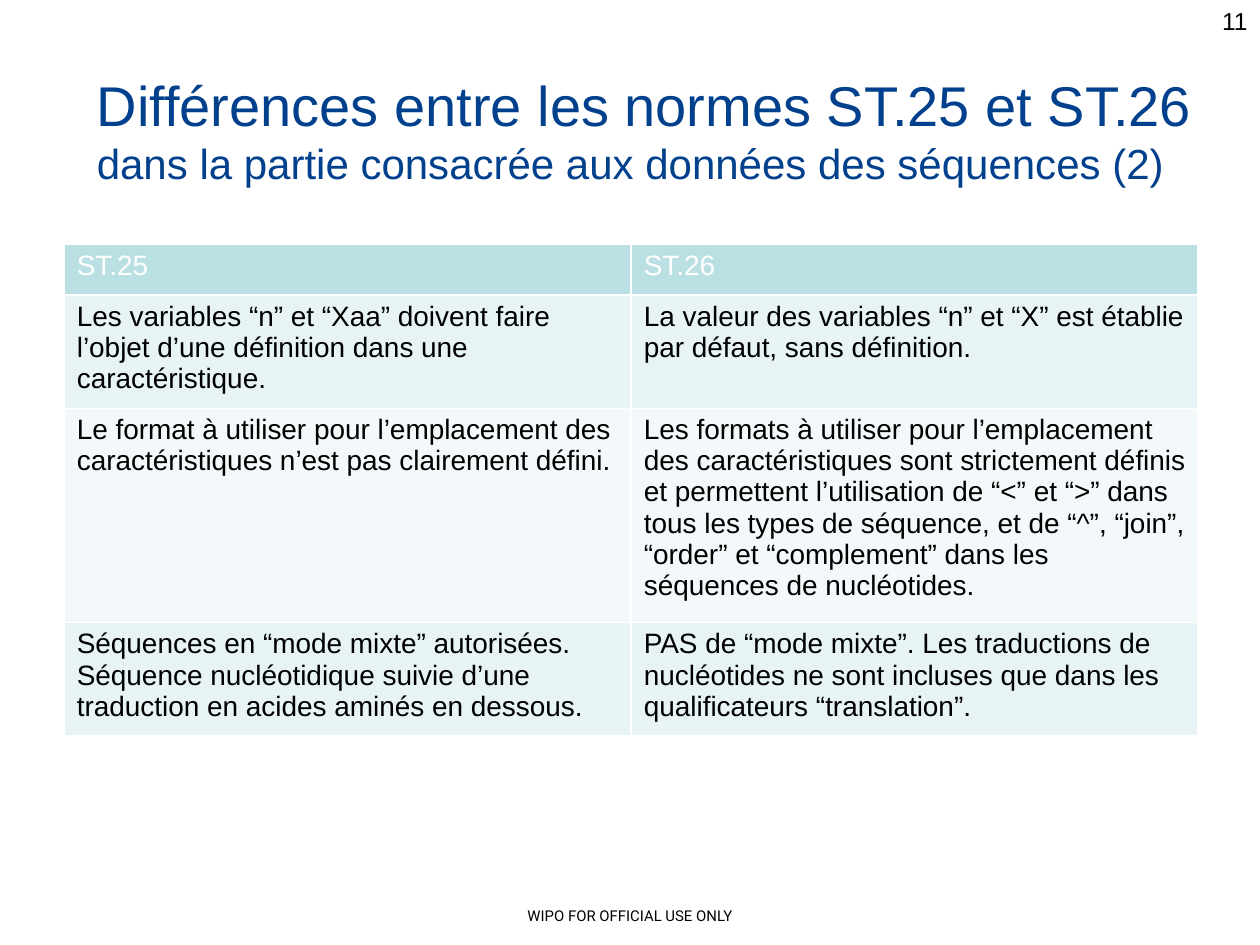
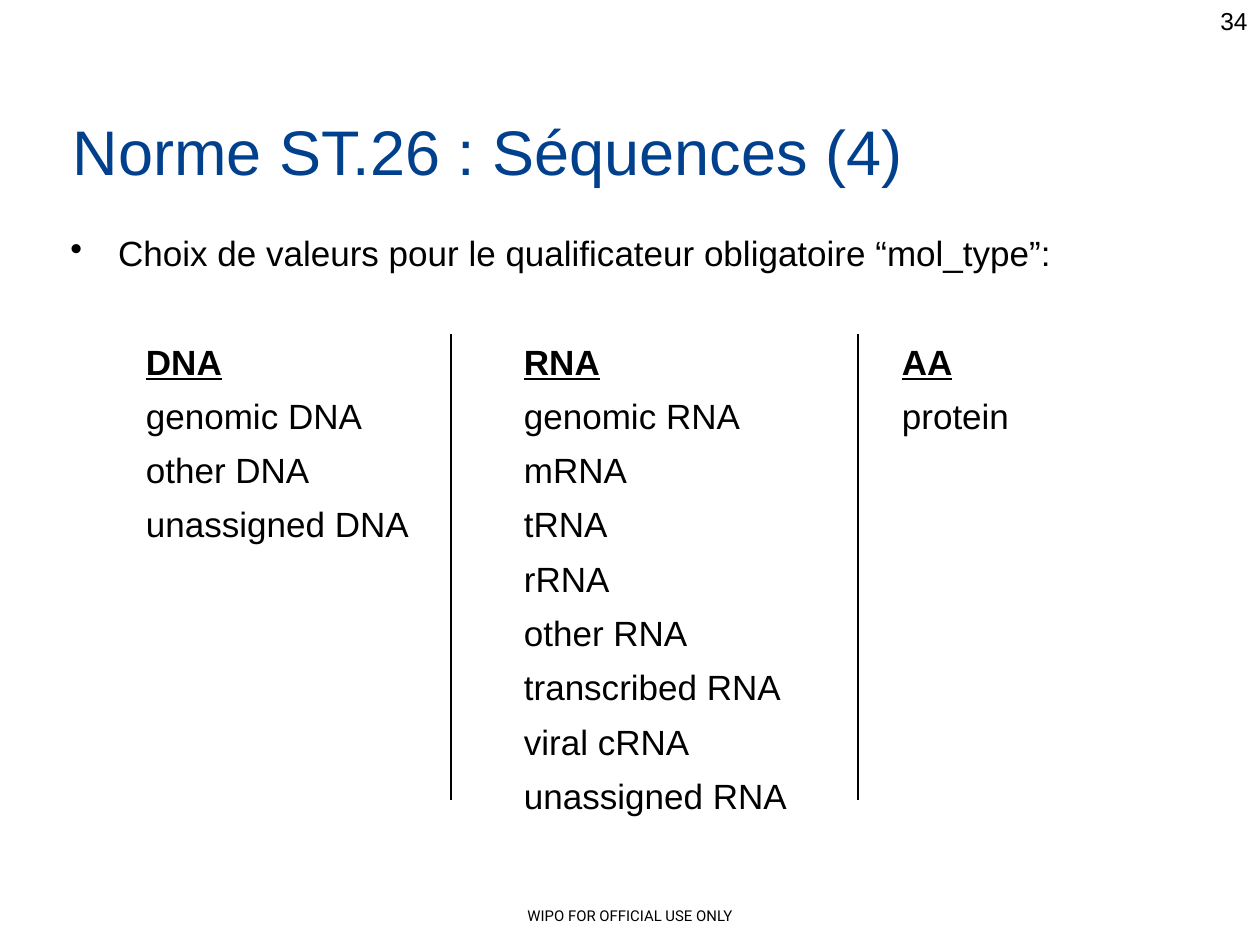
from dataclasses import dataclass

from lxml import etree
from pptx import Presentation
from pptx.dml.color import RGBColor
from pptx.enum import shapes, text
from pptx.oxml import ns
from pptx.util import Inches, Pt

FOOTER = "WIPO FOR OFFICIAL USE ONLY"

COMPARISON = {
    "number": "11",
    "title": [("Différences entre les normes ST.25 et ST.26", 32),
              ("dans la partie consacrée aux données des séquences (2)", 24)],
    "title_at": (0.67, 0.47),
    "rows": [
        ("ST.25", "ST.26"),
        ("Les variables “n” et “Xaa” doivent faire l’objet d’une définition dans une caractéristique.",
         "La valeur des variables “n” et “X” est établie par défaut, sans définition."),
        ("Le format à utiliser pour l’emplacement des caractéristiques n’est pas clairement défini.",
         "Les formats à utiliser pour l’emplacement des caractéristiques sont strictement définis "
         "et permettent l’utilisation de “<” et “>” dans tous les types de séquence, et de “^”, "
         "“join”, “order” et “complement” dans les séquences de nucléotides."),
        ("Séquences en “mode mixte” autorisées. Séquence nucléotidique suivie d’une traduction "
         "en acides aminés en dessous.",
         "PAS de “mode mixte”. Les traductions de nucléotides ne sont incluses que dans les "
         "qualificateurs “translation”."),
    ],
    "row_heights": (0.4, 0.9, 1.7, 0.9),
}

MOL_TYPES = {
    "number": "34",
    "title": [("Norme ST.26 : Séquences (4)", 36)],
    "title_at": (0.48, 0.8),
    "bullet": "Choix de valeurs pour le qualificateur obligatoire “mol_type”:",
    "headings": ("DNA", "RNA", "AA"),
    "values": [
        ("genomic DNA", "genomic RNA", "protein"),
        ("other DNA", "mRNA"),
        ("unassigned DNA", "tRNA"),
        ("", "rRNA"),
        ("", "other RNA"),
        ("", "transcribed RNA"),
        ("", "viral cRNA"),
        ("", "unassigned RNA"),
    ],
    "column_step": 3,
    "dividers": (3.58, 6.81),
}


@dataclass(frozen=True)
class Theme:
    font: str = "Arial"
    footer_font: str = "Roboto"
    title: str = "00408C"
    ink: str = "000000"
    white: str = "FFFFFF"
    header: str = "BBE0E3"
    bands: tuple = ("E7F3F4", "F3F9FA")
    footer_size: float = 8.5
    number_size: float = 14
    table_size: float = 16
    body_size: float = 20


THEME = Theme()


def style(p, size, color=THEME.ink, font=THEME.font):
    p.font.size, p.font.name = Pt(size), font
    p.font.color.rgb = RGBColor.from_string(color)


def add_box(s, x, y, w, h):
    tf = s.shapes.add_textbox(*map(Inches, (x, y, w, h))).text_frame
    tf.word_wrap = True
    return tf


def add_line(s, x, y, w, h, content, size, align, font=THEME.font):
    p = add_box(s, x, y, w, h).paragraphs[0]
    p.text, p.alignment = content, align
    style(p, size, font=font)
    return p


def new_slide(prs, content):
    """Blank slide with the shared footer, page number and title."""
    s = prs.slides.add_slide(prs.slide_layouts[6])
    add_line(s, 0, 7.15, 10, 0.24, FOOTER, THEME.footer_size,
             text.PP_ALIGN.CENTER, THEME.footer_font)
    add_line(s, 7.67, 0, 2.33, 0.52, content["number"], THEME.number_size, text.PP_ALIGN.RIGHT)
    tf = add_box(s, *content["title_at"], 9, 1.25)
    tf.margin_top = Inches(0.09)
    for i, (line, size) in enumerate(content["title"]):
        p = tf.add_paragraph() if i else tf.paragraphs[0]
        p.text = line
        style(p, size, THEME.title)
    return s


def set_borders(cell, color, width):
    tc_pr = cell._tc.get_or_add_tcPr()
    for side in ("lnL", "lnR", "lnT", "lnB"):
        ln = etree.SubElement(tc_pr, ns.qn(f"a:{side}"), w=str(Pt(width)))
        fill = etree.SubElement(ln, ns.qn("a:solidFill"))
        etree.SubElement(fill, ns.qn("a:srgbClr"), val=color)


def add_comparison_table(s, rows, heights):
    table = s.shapes.add_table(len(rows), 2, Inches(0.51), Inches(1.94),
                               Inches(9), Inches(sum(heights))).table
    table.first_row = table.horz_banding = False
    for i, (row, height) in enumerate(zip(rows, heights)):
        table.rows[i].height = Inches(height)
        fill = THEME.bands[(i - 1) % 2] if i else THEME.header
        for j, content in enumerate(row):
            cell = table.cell(i, j)
            set_borders(cell, THEME.white, 1)
            cell.fill.solid()
            cell.fill.fore_color.rgb = RGBColor.from_string(fill)
            cell.text = content
            style(cell.text_frame.paragraphs[0], THEME.table_size,
                  THEME.ink if i else THEME.white)


def add_bullet(s, content):
    p = add_box(s, 0.46, 1.79, 9.34, 0.44).paragraphs[0]
    p.text = content
    p_pr = p._p.get_or_add_pPr()
    p_pr.set("marL", str(Inches(0.38)))
    p_pr.set("indent", str(-Inches(0.38)))
    etree.SubElement(p_pr, ns.qn("a:buChar"), char="•")
    style(p, THEME.body_size)


def add_tabbed_columns(s, headings, values, step):
    tf = add_box(s, 1.06, 2.65, 7.24, 4.41)
    for i, row in enumerate([headings, *values]):
        p = tf.add_paragraph() if i else tf.paragraphs[0]
        if i:
            p.space_before = Pt(7)
        tabs = etree.SubElement(p._p.get_or_add_pPr(), ns.qn("a:tabLst"))
        for k in range(1, len(headings)):
            etree.SubElement(tabs, ns.qn("a:tab"), pos=str(Inches(k * step)), algn="l")
        style(p, THEME.body_size)
        if i:
            p.add_run().text = "\t".join(row)
            continue
        for k, heading in enumerate(row):
            if k:
                p.add_run().text = "\t"
            r = p.add_run()
            r.text = heading
            r.font.bold = r.font.underline = True


def add_divider(s, x):
    line = s.shapes.add_connector(shapes.MSO_CONNECTOR.STRAIGHT, Inches(x), Inches(2.65),
                                  Inches(x), Inches(6.35))
    line.line.color.rgb = RGBColor.from_string(THEME.ink)
    line.line.width = Pt(0.75)
    etree.SubElement(line._element.spPr, ns.qn("a:effectLst"))


def main():
    prs = Presentation()
    prs.slide_width, prs.slide_height = Inches(10), Inches(7.5)

    s = new_slide(prs, COMPARISON)
    add_comparison_table(s, COMPARISON["rows"], COMPARISON["row_heights"])

    s = new_slide(prs, MOL_TYPES)
    add_bullet(s, MOL_TYPES["bullet"])
    add_tabbed_columns(s, MOL_TYPES["headings"], MOL_TYPES["values"], MOL_TYPES["column_step"])
    for x in MOL_TYPES["dividers"]:
        add_divider(s, x)

    prs.save("out.pptx")


if __name__ == "__main__":
    main()
